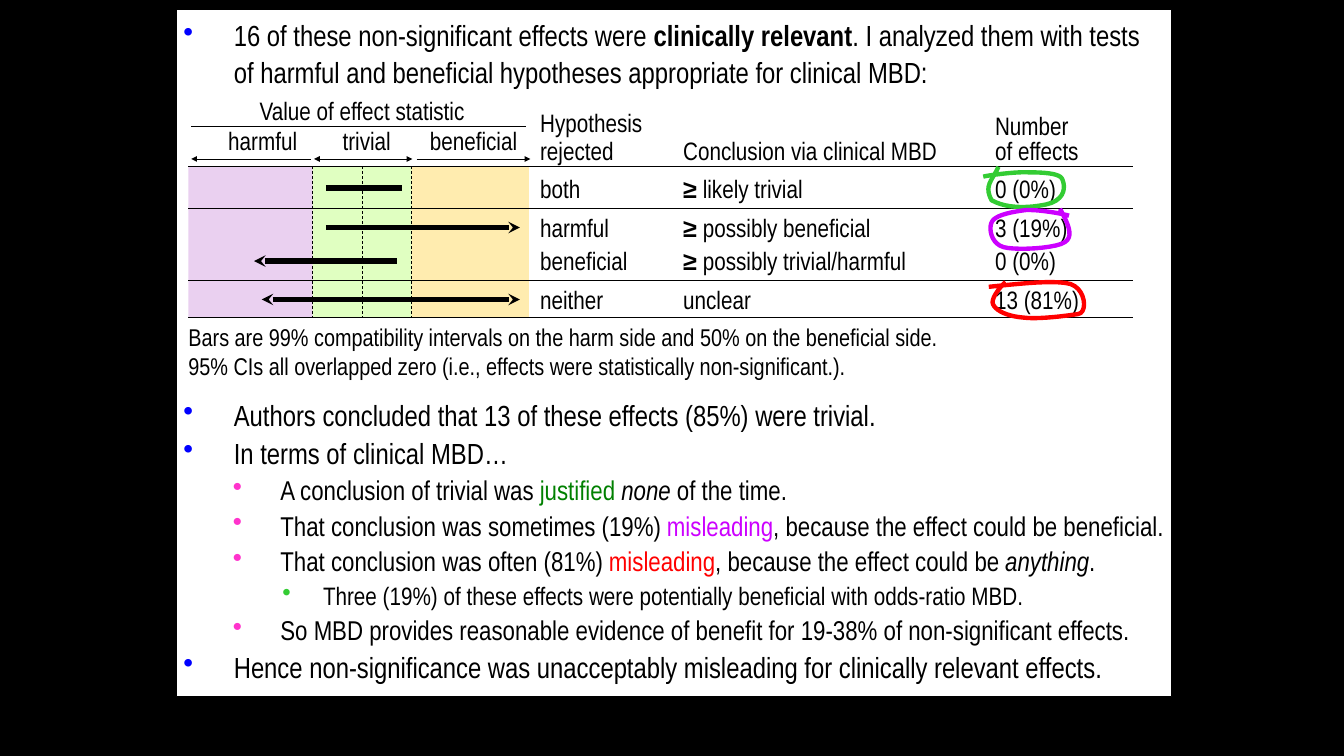
from dataclasses import dataclass, field
from typing import NamedTuple

from lxml import etree
from pptx import Presentation
from pptx import util as u
from pptx.dml.color import RGBColor
from pptx.enum import dml, shapes, text
from pptx.oxml.ns import qn

FONT = "Arial Narrow"
BLACK = "000000"
HEAD, LEFT_TEXT, CONCLUSION, EFFECTS = 26, 557.3, 704.9, 1026.7
LINE_H, TIGHT_H = 31.7, 28.1
TABLE_TOP, TABLE_BOTTOM, TABLE_LEFT, TABLE_RIGHT = 171.4, 326.9, 194.4, 1169.3


class Run(NamedTuple):
    text: str
    color: str = BLACK
    fmt: dict = {}


class Level(NamedTuple):
    margin: float
    hanging: float
    size: float
    bullet: str


@dataclass
class Item:
    level: int
    runs: list[Run]
    before: float = 1.5


@dataclass
class Label:
    x: float
    y: float
    w: float
    runs: list[Run]
    h: float = LINE_H
    size: float = HEAD
    para: dict = field(default_factory=dict)


@dataclass
class Line:
    x1: float
    y1: float
    x2: float
    y2: float
    width: float = 0.75
    dash: bool = False
    start: str = ""
    end: str = ""


@dataclass
class Row:
    y: float
    hypothesis: tuple[str, float]
    conclusion: tuple[str, float]
    effects: tuple[str, float]
    bar: Line


def rgb(value: str) -> RGBColor:
    return RGBColor.from_string(value)


def apply(target, values: dict) -> None:
    for name, value in values.items():
        setattr(target, name, value)


def add_runs(p, runs: list[Run], size: float) -> None:
    for run in runs:
        r = p.add_run()
        r.text = run.text
        apply(r.font, {"name": FONT, "size": u.Pt(size), **run.fmt})
        r.font.color.rgb = rgb(run.color)


def add_box(s, x: float, y: float, w: float, h: float, fill: str):
    sp = s.shapes.add_shape(shapes.MSO_SHAPE.RECTANGLE, *map(u.Pt, (x, y, w, h)))
    sp.shadow.inherit = False
    sp.fill.solid()
    sp.fill.fore_color.rgb = rgb(fill)
    sp.line.fill.background()
    return sp


def add_label(s, label: Label) -> None:
    sp = s.shapes.add_textbox(*map(u.Pt, (label.x, label.y, label.w, label.h)))
    tf = sp.text_frame
    apply(tf, {"margin_left": 0, "margin_right": 0, "margin_top": 0, "margin_bottom": 0,
               "word_wrap": False, "auto_size": text.MSO_AUTO_SIZE.SHAPE_TO_FIT_TEXT})
    p = tf.paragraphs[0]
    apply(p, label.para)
    add_runs(p, label.runs, label.size)


def add_line(s, line: Line):
    c = s.shapes.add_connector(shapes.MSO_CONNECTOR.STRAIGHT,
                               *map(u.Pt, (line.x1, line.y1, line.x2, line.y2)))
    c.line.width = u.Pt(line.width)
    c.line.color.rgb = rgb(BLACK)
    if line.dash:
        c.line.dash_style = dml.MSO_LINE.DASH
    size = "sm" if line.width > 1 else "med"
    for tag, kind in (("a:headEnd", line.start), ("a:tailEnd", line.end)):
        if kind:
            etree.SubElement(c.line._get_or_add_ln(), qn(tag), type=kind, w=size, len=size)
    etree.SubElement(c._element.spPr, qn("a:effectLst"))
    return c


def add_item(p, item: Item) -> None:
    level = LEVELS[item.level]
    apply(p, {"level": item.level, "line_spacing": 1.05, "space_before": u.Pt(item.before),
              "alignment": text.PP_ALIGN.LEFT})
    pPr = p._p.get_or_add_pPr()
    pPr.set("marL", str(u.Pt(level.margin)))
    pPr.set("indent", str(-u.Pt(level.hanging)))
    color = etree.SubElement(pPr, qn("a:buClr"))
    etree.SubElement(color, qn("a:srgbClr"), val=level.bullet)
    etree.SubElement(pPr, qn("a:buChar"), char="•")
    add_runs(p, item.runs, level.size)


def add_loop(s, color: str, pts: list[tuple[float, float]], steps: int = 10) -> None:
    """Draw a chain of cubic curves: a start point, then three points per curve."""
    curve = []
    for i in range(0, len(pts) - 1, 3):
        for k in range(1, steps + 1):
            t = k / steps
            weights = ((1 - t) ** 3, 3 * t * (1 - t) ** 2, 3 * t * t * (1 - t), t ** 3)
            curve.append(tuple(u.Pt(sum(w * q[axis] for w, q in zip(weights, pts[i:i + 4])))
                               for axis in (0, 1)))
    fb = s.shapes.build_freeform(*map(u.Pt, pts[0]))
    fb.add_line_segments(curve, close=False)
    sp = fb.convert_to_shape()
    sp.shadow.inherit = False
    sp.fill.background()
    sp.line.width = u.Pt(4.5)
    sp.line.color.rgb = rgb(color)


LEVELS = [Level(52, 52, 30, "0000FF"), Level(100, 49, 28, "FF33CC"), Level(144, 42, 26, "33CC33")]
ITALIC, BOLD = {"italic": True}, {"bold": True}
ITEMS = [
    Item(0, [Run("16 of these non-significant effects were "), Run("clinically relevant", fmt=BOLD),
             Run(". I analyzed them with tests of harmful and beneficial hypotheses "
                 "appropriate for clinical MBD:")]),
    Item(0, [Run("Authors concluded that 13 of these effects (85%) were trivial.")], before=316),
    Item(0, [Run("In terms of clinical MBD…")]),
    Item(1, [Run("A conclusion of trivial was "), Run("justified ", "008000"),
             Run("none", fmt=ITALIC), Run(" of the time.")]),
    Item(1, [Run("That conclusion was sometimes (19%) "), Run("misleading", "CC00FF"),
             Run(", because the effect could be beneficial.")]),
    Item(1, [Run("That conclusion was often (81%) "), Run("misleading", "FF0000"),
             Run(", because the effect could be "), Run("anything", fmt=ITALIC), Run(".")]),
    Item(2, [Run("Three (19%) of these effects were potentially beneficial with odds-ratio MBD.")]),
    Item(1, [Run("So MBD provides reasonable evidence of benefit for 19-38% of non-significant effects.")]),
    Item(0, [Run("Hence non-significance was unacceptably misleading for clinically relevant effects.")]),
]
TIGHT = {"line_spacing": 0.9}
LABELS = [
    Label(267.8, 98.6, 220.3, [Run("Value of effect statistic")]),
    Label(234.7, 129.6, 72, [Run("harmful")], para={"alignment": text.PP_ALIGN.RIGHT}),
    Label(353.5, 129.6, 50.4, [Run("trivial")]),
    Label(443.5, 129.6, 90.7, [Run("beneficial")]),
    Label(LEFT_TEXT, 113.8, 106.6, [Run("Hypothesis")], TIGHT_H, para=TIGHT),
    Label(LEFT_TEXT, 143.3, 76.3, [Run("rejected")], TIGHT_H, para=TIGHT),
    Label(CONCLUSION, 142.6, 264.2, [Run("Conclusion via clinical MBD")], TIGHT_H, para=TIGHT),
    Label(EFFECTS, 113.8, 76.3, [Run("Number")]),
    Label(EFFECTS, 143.3, 86.4, [Run("of effects")], TIGHT_H, para=TIGHT),
    Label(TABLE_LEFT, 331.9, 781.2, [Run("Bars are 99% compatibility intervals on the harm side "
                                         "and 50% on the beneficial side.")], 30.2, 25),
    Label(TABLE_LEFT, 362.2, 685.4, [Run("95% CIs all overlapped zero (i.e., effects were "
                                         "statistically non-significant.).")], 30.2, 25),
]
ROWS = [
    Row(178.6, ("both", 41.8), ("≥ likely trivial", 124.6), ("0 (0%)", 63.4),
        Line(336.2, 193.7, 414.7, 193.7, 6)),
    Row(218.9, ("harmful", 72), ("≥ possibly beneficial", 200.2), ("3 (19%)", 75.6),
        Line(336.2, 234.7, 536.4, 234.7, 6, end="stealth")),
    Row(253.4, ("beneficial", 90.7), ("≥ possibly trivial/harmful", 231.8), ("0 (0%)", 63.4),
        Line(262.1, 269.3, 409.7, 269.3, 6, start="stealth")),
    Row(293, ("neither", 66.2), ("unclear", 70.6), ("13 (81%)", 87.1),
        Line(270, 308.9, 536.4, 308.9, 6, start="stealth", end="stealth")),
]
SCALE_ARROWS = [Line(197.3, 164, 320.4, 164, start="triangle"),
                Line(324, 164, 425.5, 164, start="triangle", end="triangle"),
                Line(429.8, 164, 547.2, 164, end="triangle")]
LOOPS = {
    "33CC33": [(1014.5, 182.2), (1021, 180.7), (1047.6, 177.1), (1061.3, 177.8), (1075, 177.8),
               (1093, 178.6), (1095.8, 184.3), (1098.7, 190.1), (1101.6, 205.9), (1079.3, 211),
               (1057.7, 215.3), (1037.5, 214.6), (1023.1, 206.6), (1015.2, 191.5),
               (1023.1, 187.2), (1030.3, 172.1)],
    "CC00FF": [(1103, 222.5), (1095.8, 220.3), (1071.4, 216), (1058.4, 216.7), (1045.4, 218.2),
               (1027.4, 221.8), (1023.8, 228.2), (1019.5, 234.7), (1022.4, 251.3),
               (1035.4, 254.9), (1047.6, 258.5), (1089.4, 256.3), (1098.7, 249.8),
               (1108.8, 243.4), (1100.9, 229), (1093.7, 215.3)],
    "FF0000": [(1037.5, 290.9), (1033.2, 294.5), (1021.7, 308.2), (1024.6, 313.9),
               (1027.4, 320.4), (1039, 326.2), (1055.5, 327.6), (1072.1, 329.8),
               (1102.3, 325.4), (1112.4, 324), (1122.5, 322.6), (1120.3, 298.1),
               (1104.5, 293), (1089.4, 288.7), (1054.8, 292.3), (1020.2, 295.9)],
}


def main() -> None:
    prs = Presentation()
    prs.slide_width, prs.slide_height = u.Pt(1386.7), u.Pt(779.8)
    s = prs.slides.add_slide(prs.slide_layouts[6])
    s.background.fill.solid()
    s.background.fill.fore_color.rgb = rgb(BLACK)

    # White panel with the bulleted text; the gap leaves room for the table
    panel = add_box(s, 182.2, 10.1, 1026.7, 708.5, "FFFFFF")
    panel.line.width = u.Pt(0.75)
    panel.line.color.rgb = rgb(BLACK)
    tf = panel.text_frame
    apply(tf, {"margin_left": u.Pt(7.2), "margin_right": u.Pt(7.2), "margin_top": u.Pt(6.5),
               "margin_bottom": u.Pt(3.6), "word_wrap": True,
               "vertical_anchor": text.MSO_ANCHOR.TOP})
    for i, item in enumerate(ITEMS):
        add_item(tf.add_paragraph() if i else tf.paragraphs[0], item)

    # Harmful, trivial and beneficial zones with dashed limits
    height = TABLE_BOTTOM - TABLE_TOP
    add_box(s, 409.7, TABLE_TOP, 136.1, height, "FFECAF")
    add_box(s, TABLE_LEFT, TABLE_TOP, 141.8, height, "EAD0F0")
    trivial = add_box(s, 322.5, TABLE_TOP, 102.4, height, "E0FFC1")
    limits = [add_line(s, Line(x, TABLE_TOP, x, TABLE_BOTTOM, dash=True))
              for x in (321.8, 373.7, 424.8)]
    limits[1].begin_connect(trivial, 0)
    limits[1].end_connect(trivial, 2)

    # Rules, scale arrows, headings and notes
    for y in (TABLE_TOP, 214.6, 288.7, TABLE_BOTTOM):
        add_line(s, Line(TABLE_LEFT, y, TABLE_RIGHT, y))
    for line in [Line(197.3, 130.3, 542.9, 130.3), *SCALE_ARROWS]:
        add_line(s, line)
    for label in LABELS:
        add_label(s, label)

    # Table rows with interval bars
    for row in ROWS:
        add_line(s, row.bar)
        for x, (words, w) in zip((LEFT_TEXT, CONCLUSION, EFFECTS),
                                 (row.hypothesis, row.conclusion, row.effects)):
            sign, mark, rest = words.rpartition("≥ ")
            runs = [Run(mark, fmt=BOLD), Run(rest)] if mark else [Run(rest)]
            add_label(s, Label(x, row.y, w, runs))

    # Hand-drawn loops around the counts
    for color, pts in LOOPS.items():
        add_loop(s, color, pts)

    prs.save("out.pptx")


if __name__ == "__main__":
    main()
